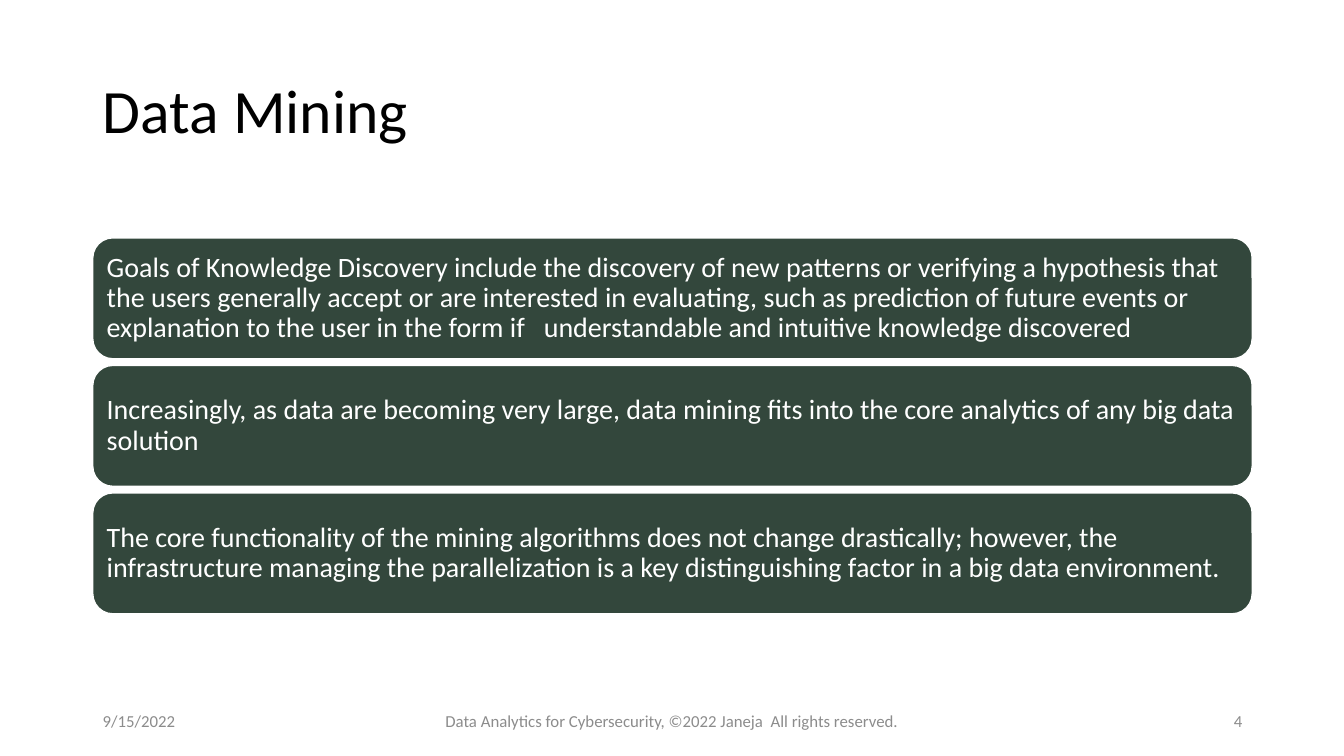
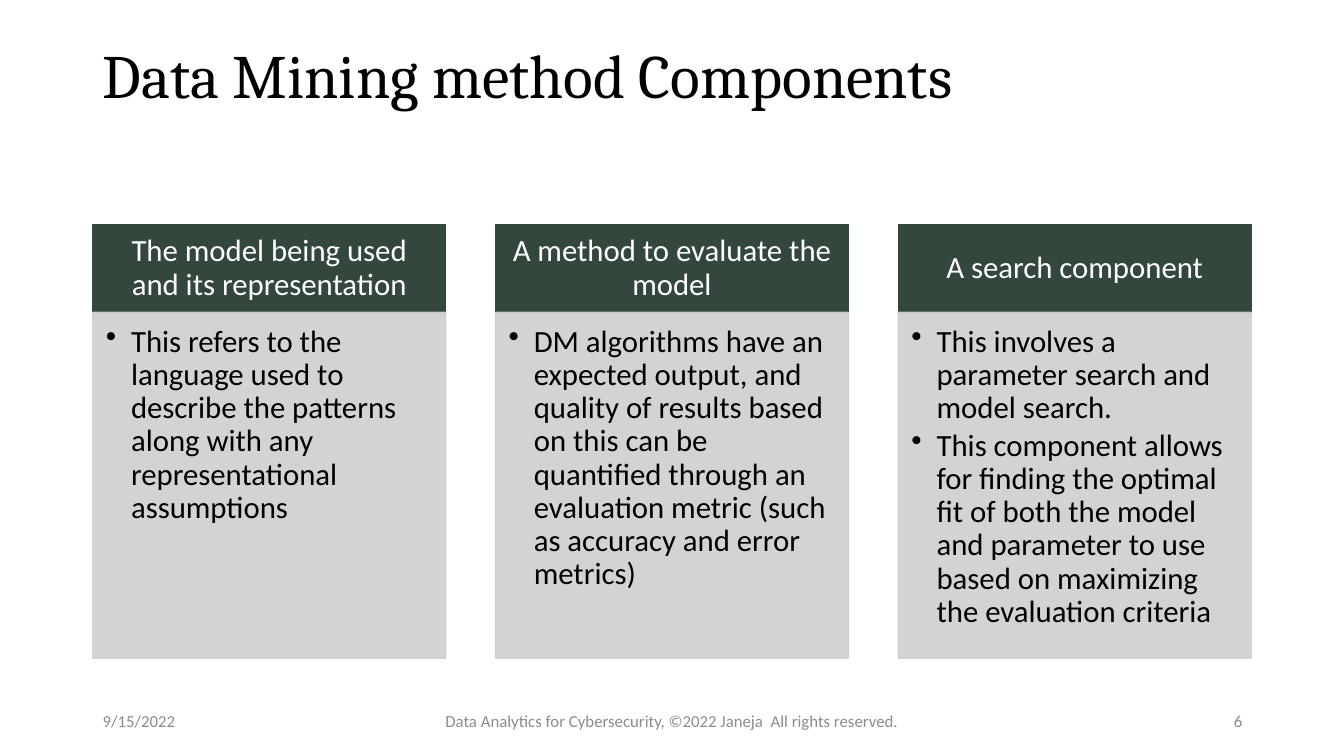
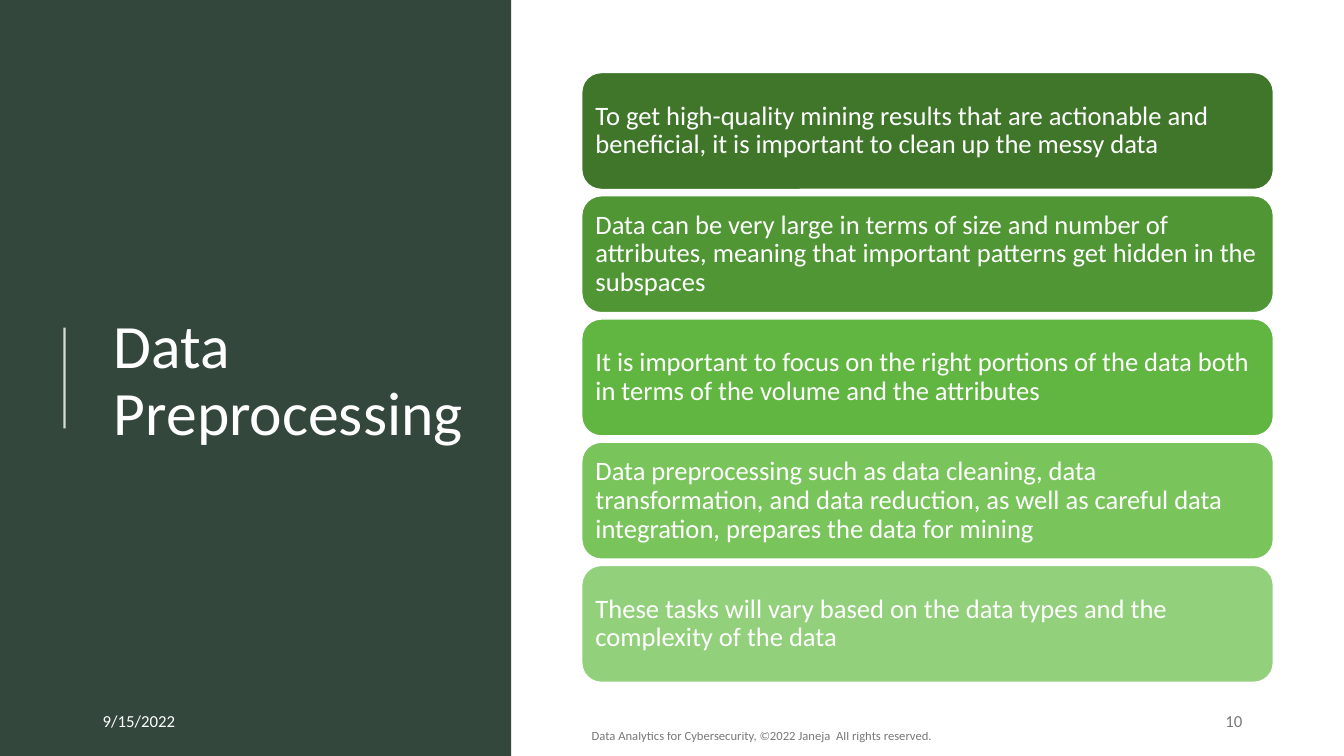
from dataclasses import dataclass

from lxml.etree import SubElement
from pptx import Presentation
from pptx.dml.color import RGBColor
from pptx.enum.shapes import MSO_CONNECTOR, MSO_SHAPE
from pptx.enum.text import MSO_ANCHOR, MSO_AUTO_SIZE, PP_ALIGN
from pptx.oxml.ns import qn
from pptx.util import Inches, Pt


@dataclass(frozen=True)
class Theme:
    font: str = "Calibri"
    serif: str = "Cambria"
    forest: str = "33473C"
    mist: str = "CECFCE"
    white: str = "FFFFFF"
    black: str = "000000"
    footer_gray: str = "8C8C8C"
    charcoal: str = "404040"
    greens: tuple = ("3F762A", "509635", "61B541", "79C55C", "93D07C")
    title_size: float = 44
    column_size: float = 22
    band_size: float = 20
    small_band_size: float = 19
    footer_size: float = 12
    small_footer_size: float = 9
    line_spacing: float = 0.9


THEME = Theme()
TITLE_BOX = (0.92, 0.4, 11.5, 1.45)
DATE = "9/15/2022"
COPYRIGHT = "Data Analytics for Cybersecurity, ©2022 Janeja  All rights reserved."
COPYRIGHT_BOX = (4.26, 6.95, 4.81, 0.4)

GOALS = [
    "Goals of Knowledge Discovery include the discovery of new patterns or verifying "
    "a hypothesis that the users generally accept or are interested in evaluating, "
    "such as prediction of future events or explanation to the user in the form if "
    "  understandable and intuitive knowledge discovered",
    "Increasingly, as data are becoming very large, data mining fits into the core "
    "analytics of any big data solution",
    "The core functionality of the mining algorithms does not change drastically; "
    "however, the infrastructure managing the parallelization is a key distinguishing "
    "factor in a big data environment.",
]
COMPONENTS = [
    ("The model being used and its representation",
     ["This refers to the language used to describe the patterns along with any "
      "representational assumptions"]),
    ("A method to evaluate the model",
     ["DM algorithms have an expected output, and quality of results based on this can "
      "be quantified through an evaluation metric (such as accuracy and error metrics)"]),
    ("A search component",
     ["This involves a parameter search and model search.",
      "This component allows for finding the optimal fit of both the model and "
      "parameter to use based on maximizing the evaluation criteria"]),
]
PREPROCESSING = [
    "To get high-quality mining results that are actionable and beneficial, it is "
    "important to clean up the messy data",
    "Data can be very large in terms of size and number of attributes, meaning that "
    "important patterns get hidden in the subspaces",
    "It is important to focus on the right portions of the data both in terms of the "
    "volume and the attributes",
    "Data preprocessing such as data cleaning, data transformation, and data "
    "reduction, as well as careful data integration, prepares the data for mining",
    "These tasks will vary based on the data types and the complexity of the data",
]


def inches(box):
    return [Inches(length) for length in box]


def spread(start, end, size, count):
    """Return the starts of equal items that fill start to end with equal gaps."""
    step = (end - start - size) / (count - 1)
    return [start + step * index for index in range(count)]


def fade(element, percent):
    """Make every RGB colour inside the element partly transparent."""
    for color in element.iter(qn("a:srgbClr")):
        SubElement(color, qn("a:alpha"), val=str(percent * 1000))


def add_bullet(paragraph):
    properties = paragraph._p.get_or_add_pPr()
    properties.set("marL", str(Inches(0.25)))
    properties.set("indent", str(Inches(-0.25)))
    SubElement(properties, qn("a:buChar"), char="•")


def write(frame, texts, size, color, font=THEME.font, align=PP_ALIGN.LEFT,
          anchor=MSO_ANCHOR.MIDDLE, insets=(0.1, 0.05, 0.1, 0.05),
          spacing=THEME.line_spacing, bulleted=False):
    frame.word_wrap = True
    frame.auto_size = MSO_AUTO_SIZE.NONE
    frame.vertical_anchor = anchor
    (frame.margin_left, frame.margin_top,
     frame.margin_right, frame.margin_bottom) = inches(insets)
    for index, text in enumerate(texts):
        paragraph = frame.add_paragraph() if index else frame.paragraphs[0]
        paragraph.alignment = align
        paragraph.line_spacing = spacing
        if bulleted:
            paragraph.space_after = Pt(3)
            add_bullet(paragraph)
        run = paragraph.add_run()
        run.text = text
        run.font.name = font
        run.font.size = Pt(size)
        run.font.color.rgb = RGBColor.from_string(color)


def add_block(slide, box, fill, line=None, kind=MSO_SHAPE.RECTANGLE):
    block = slide.shapes.add_shape(kind, *inches(box))
    block.shadow.inherit = False
    block.fill.solid()
    block.fill.fore_color.rgb = RGBColor.from_string(fill)
    if line:
        block.line.color.rgb = RGBColor.from_string(line)
        block.line.width = Pt(1)
    else:
        block.line.fill.background()
    return block


def add_titled_slide(deck, title, box=TITLE_BOX, color=THEME.black, **style):
    slide = deck.slides.add_slide(deck.slide_layouts[5])
    heading = slide.shapes.title
    heading.left, heading.top, heading.width, heading.height = inches(box)
    write(heading.text_frame, [title], THEME.title_size, color, **style)
    return slide


def add_label(slide, box, text, size, color, opacity=None, **style):
    label = slide.shapes.add_textbox(*inches(box))
    write(label.text_frame, [text], size, color, **style)
    if opacity:
        fade(label._element, opacity)


def add_footer(slide, number, date_color=THEME.footer_gray, color=THEME.footer_gray,
               opacity=None, copyright_box=COPYRIGHT_BOX,
               copyright_size=THEME.footer_size, copyright_align=PP_ALIGN.CENTER):
    add_label(slide, (0.92, 6.95, 3, 0.4), DATE, THEME.footer_size, date_color,
              spacing=1.0)
    add_label(slide, copyright_box, COPYRIGHT, copyright_size, color, opacity,
              align=copyright_align, spacing=1.0)
    add_label(slide, (9.42, 6.95, 3, 0.4), number, THEME.footer_size, color, opacity,
              align=PP_ALIGN.RIGHT, spacing=1.0)


def add_bands(slide, texts, fills, left, width, top, bottom, height, size):
    """Stack rounded bands of text between top and bottom."""
    tops = spread(top, bottom, height, len(texts))
    for text, fill, band_top in zip(texts, fills, tops):
        band = add_block(slide, (left, band_top, width, height), fill, THEME.white,
                         MSO_SHAPE.ROUNDED_RECTANGLE)
        write(band.text_frame, [text], size, THEME.white, insets=(0.08,) * 4)


def add_column(slide, left, heading, points):
    width, top, header_height, body_height = 3.5, 2.23, 0.87, 3.43
    header = add_block(slide, (left, top, width, header_height),
                       THEME.forest, THEME.forest)
    write(header.text_frame, [heading], THEME.column_size, THEME.white,
          align=PP_ALIGN.CENTER, insets=(0.17, 0.1, 0.17, 0.1))
    body = add_block(slide, (left, top + header_height, width, body_height),
                     THEME.mist, THEME.mist)
    fade(body._element.spPr, 90)
    write(body.text_frame, points, THEME.column_size, THEME.black,
          anchor=MSO_ANCHOR.TOP, insets=(0.13, 0.13, 0.17, 0.19), bulleted=True)


def add_side_panel(slide):
    """Put the dark panel behind the title and the thin rule beside it."""
    panel = add_block(slide, (0, 0, 5.07, 7.5), THEME.forest)
    slide.shapes.title._element.addprevious(panel._element)
    rule = slide.shapes.add_connector(MSO_CONNECTOR.STRAIGHT,
                                      *inches((0.64, 4.25, 0.64, 3.25)))
    rule.line.color.rgb = RGBColor.from_string(THEME.white)
    rule.line.width = Pt(1.5)
    fade(rule._element.spPr, 80)
    SubElement(rule._element.spPr, qn("a:effectLst"))


def build_data_mining(deck):
    slide = add_titled_slide(deck, "Data Mining")
    add_bands(slide, GOALS, [THEME.forest] * len(GOALS), left=0.92, width=11.5,
              top=2.36, bottom=6.09, height=1.2, size=THEME.band_size)
    add_footer(slide, "4")


def build_components(deck):
    slide = add_titled_slide(deck, "Data Mining method Components",
                             font=THEME.serif, anchor=MSO_ANCHOR.TOP)
    lefts = spread(0.92, 12.41, 3.5, len(COMPONENTS))
    for left, (heading, points) in zip(lefts, COMPONENTS):
        add_column(slide, left, heading, points)
    add_footer(slide, "6")


def build_preprocessing(deck):
    slide = add_titled_slide(deck, "Data Preprocessing", (1.03, 0.78, 3.69, 6.02),
                             THEME.white)
    add_side_panel(slide)
    add_footer(slide, "10", THEME.white, THEME.charcoal, 70,
               (5.77, 7.1, 4.03, 0.4), THEME.small_footer_size, PP_ALIGN.LEFT)
    add_bands(slide, PREPROCESSING, THEME.greens, left=5.77, width=6.86,
              top=0.72, bottom=6.77, height=1.16, size=THEME.small_band_size)


def main():
    deck = Presentation()
    deck.slide_width, deck.slide_height = Inches(13.33), Inches(7.5)
    build_data_mining(deck)
    build_components(deck)
    build_preprocessing(deck)
    deck.save("out.pptx")


if __name__ == "__main__":
    main()
